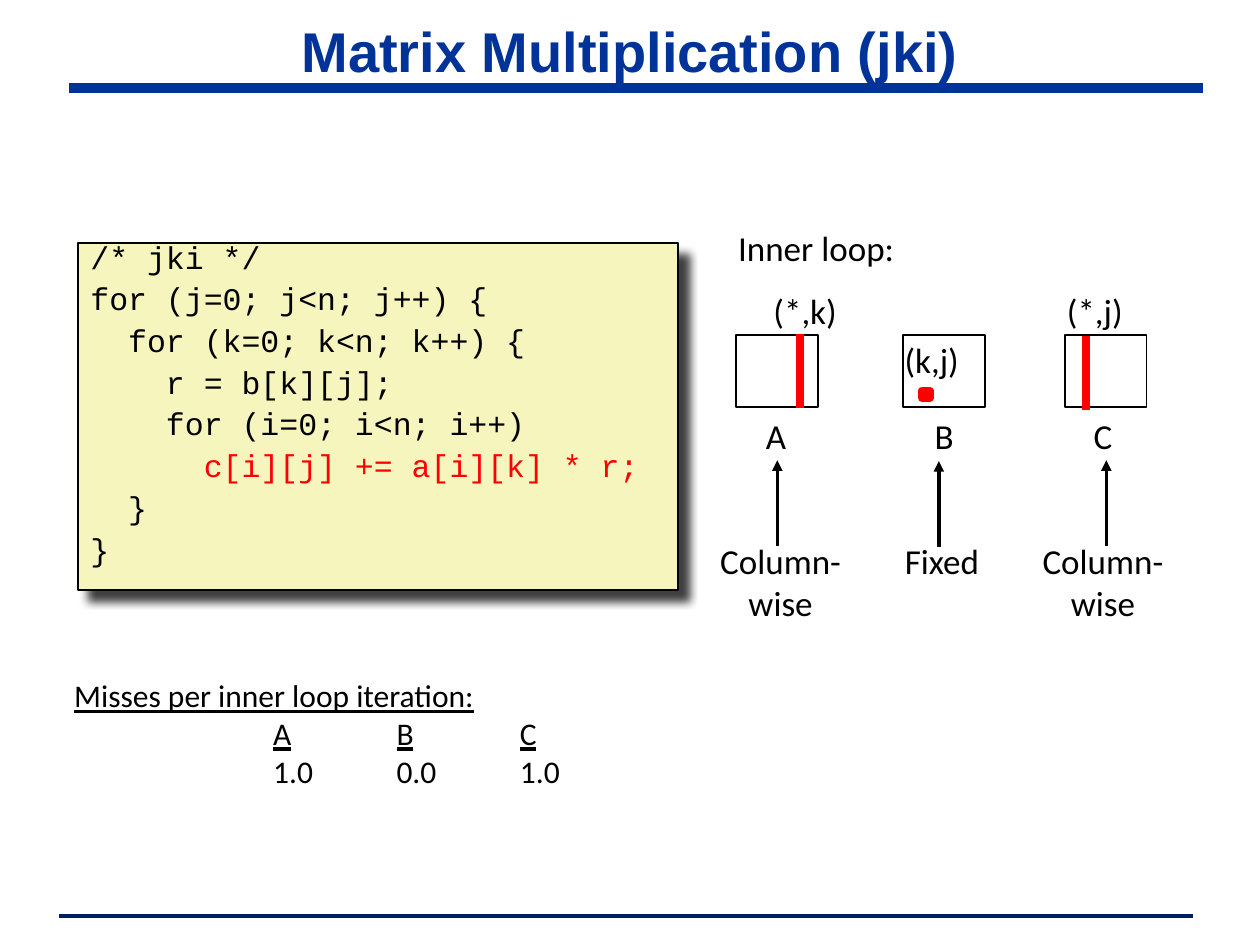
from dataclasses import dataclass

from lxml.etree import SubElement
from pptx import Presentation
from pptx.dml.color import RGBColor
from pptx.enum.shapes import MSO_CONNECTOR, MSO_SHAPE
from pptx.enum.text import MSO_ANCHOR, PP_ALIGN
from pptx.oxml.ns import qn
from pptx.util import Pt

BLACK, RED, NAVY = "000000", "FF0000", "003399"
LABEL = {"name": "Calibri", "size": Pt(20)}
CODE = {"name": "Courier New", "size": Pt(18)}
NOTE = {"name": "Calibri", "size": Pt(18)}
BOX_TOP, BOX_WIDTH, BOX_HEIGHT = 191.5, 46.8, 41


@dataclass
class Label:
    text: str
    left: float
    top: float
    width: float
    align: PP_ALIGN = PP_ALIGN.LEFT


@dataclass
class Matrix:
    left: float
    name: Label
    index: Label
    access: Label
    arrow_x: float
    arrow_top: float = 263


MATRICES = [
    Matrix(420.5, Label("A", 430.6, 233.3, 26.6), Label("(*,k)", 434.9, 162, 51),
           Label("Column-\nwise", 404, 304.6, 84.2, PP_ALIGN.CENTER), 444.2),
    Matrix(516.2, Label("B", 527, 233.3, 25.2), Label("(k,j)", 509.8, 190.1, 45.4),
           Label("Fixed", 509.8, 304.6, 56.9, PP_ALIGN.CENTER), 536.5, 263.5),
    Matrix(608.4, Label("C", 617.8, 233.3, 25.2), Label("(*,j)", 602.6, 162, 46.8),
           Label("Column-\nwise", 588.2, 304.6, 84.2, PP_ALIGN.CENTER), 632.2),
]
CODE_LINES = [
    ("/* jki */", BLACK),
    ("for (j=0; j<n; j++) {", BLACK),
    ("  for (k=0; k<n; k++) {", BLACK),
    ("    r = b[k][j];", BLACK),
    ("    for (i=0; i<n; i++)", BLACK),
    ("      c[i][j] += a[i][k] * r;", RED),
    ("  }", BLACK),
    ("}", BLACK),
]
MISSES = {"A": "1.0", "B": "0.0", "C": "1.0"}


def paint(target, color: str) -> None:
    """Colour a font, line or fill."""
    if hasattr(target, "solid"):
        target.solid()
        target.fore_color.rgb = RGBColor.from_string(color)
    elif hasattr(target, "fill") and hasattr(target, "width"):
        paint(target.fill, color)
    else:
        target.color.rgb = RGBColor.from_string(color)


def style(font, formats: dict, color: str = BLACK) -> None:
    for key, value in formats.items():
        setattr(font, key, value)
    paint(font, color)


def add_line(page, start: tuple, end: tuple, color: str, width: float, arrow: bool = False):
    line = page.shapes.add_connector(MSO_CONNECTOR.STRAIGHT, *map(Pt, start + end))
    paint(line.line, color)
    line.line.width = Pt(width)
    properties = line.line._get_or_add_ln()
    if arrow:
        SubElement(properties, qn("a:tailEnd"), type="triangle")
    SubElement(properties.getparent(), qn("a:effectLst"))


def add_rectangle(page, area: tuple, fill: str, outline: str, width: float = 1):
    box = page.shapes.add_shape(MSO_SHAPE.RECTANGLE, *map(Pt, area))
    box.shadow.inherit = False
    paint(box.fill, fill)
    paint(box.line, outline)
    box.line.width = Pt(width)
    return box


def add_label(page, label: Label) -> None:
    box = page.shapes.add_textbox(*map(Pt, (label.left, label.top, label.width, 31)))
    frame = box.text_frame
    frame.word_wrap = False
    frame.text = label.text
    for para in frame.paragraphs:
        para.alignment = label.align
        style(para.font, LABEL)


def add_shadow(box) -> None:
    effects = box._element.spPr.find(qn("a:effectLst"))
    shadow = SubElement(effects, qn("a:outerShdw"), blurRad=str(Pt(5)), dist=str(Pt(8.5)),
                        dir=str(45 * 60000), algn="tl", rotWithShape="0")
    color = SubElement(shadow, qn("a:srgbClr"), val=BLACK)
    SubElement(color, qn("a:alpha"), val="75000")


def add_code(page) -> None:
    box = add_rectangle(page, (44.6, 139, 342.7, 198), "F6F5BD", BLACK)
    add_shadow(box)
    frame = box.text_frame
    frame.vertical_anchor = MSO_ANCHOR.TOP
    frame.margin_top = Pt(3.6)
    for number, (text, color) in enumerate(CODE_LINES):
        para = frame.add_paragraph() if number else frame.paragraphs[0]
        para.alignment = PP_ALIGN.LEFT
        para.line_spacing = 0.65
        para.space_before = Pt(9.8 if number else 0)
        span = para.add_run()
        span.text = text
        style(span.font, CODE, color)


def add_matrix(page, matrix: Matrix) -> None:
    add_rectangle(page, (matrix.left, BOX_TOP, BOX_WIDTH, BOX_HEIGHT), "FFFFFF", BLACK)
    for label in (matrix.name, matrix.index, matrix.access):
        add_label(page, label)
    add_line(page, (matrix.arrow_x, matrix.arrow_top + 49),
             (matrix.arrow_x, matrix.arrow_top), BLACK, 2, arrow=True)


def add_misses(page) -> None:
    box = page.shapes.add_textbox(*map(Pt, (35.3, 383, 432.7, 96.5)))
    frame = box.text_frame
    frame.word_wrap = True
    rows = [["Misses per inner loop iteration:"], list(MISSES), list(MISSES.values())]
    for number, cells in enumerate(rows):
        para = frame.add_paragraph() if number else frame.paragraphs[0]
        if number:
            tabs = SubElement(para._p.get_or_add_pPr(), qn("a:tabLst"))
            for stop in range(len(cells) + 1):
                SubElement(tabs, qn("a:tab"), pos=str(Pt(43.2 + 70.5 * stop)), algn="l")
        for column, text in enumerate(cells):
            if number:
                gap = para.add_run()
                gap.text = "\t" if column else "\t\t"
                style(gap.font, NOTE)
            span = para.add_run()
            span.text = text
            style(span.font, NOTE | {"underline": number < 2})


def add_title(page) -> None:
    title = page.shapes.title
    place = {"left": 36, "top": 11.5, "width": 648, "height": 33.8}
    for key, value in place.items():
        setattr(title, key, Pt(value))
    frame = title.text_frame
    frame.text = "Matrix Multiplication (jki)"
    frame.vertical_anchor = MSO_ANCHOR.MIDDLE
    para = frame.paragraphs[0]
    para.alignment = PP_ALIGN.CENTER
    style(para.font, {"name": "Arial", "size": Pt(32), "bold": True}, NAVY)


def main() -> None:
    deck = Presentation()
    deck.slide_width, deck.slide_height = Pt(720), Pt(540)
    page = deck.slides.add_slide(deck.slide_layouts[5])
    add_line(page, (33.8, 523.4), (681.8, 523.4), "002060", 2.25)
    add_line(page, (39.6, 50.4), (687.6, 50.4), NAVY, 6)
    add_title(page)
    add_code(page)
    add_label(page, Label("Inner loop:", 414.7, 126, 104.4))
    for matrix in MATRICES:
        add_matrix(page, matrix)
    add_line(page, (457.2, 233.3), (457.2, 191), RED, 4.5)
    add_line(page, (620.8, 234), (620.8, 192), RED, 4.5)
    add_rectangle(page, (527, 223.2, 4.3, 4.3), RED, RED, 4.5)
    add_misses(page)
    deck.save("out.pptx")


if __name__ == "__main__":
    main()
